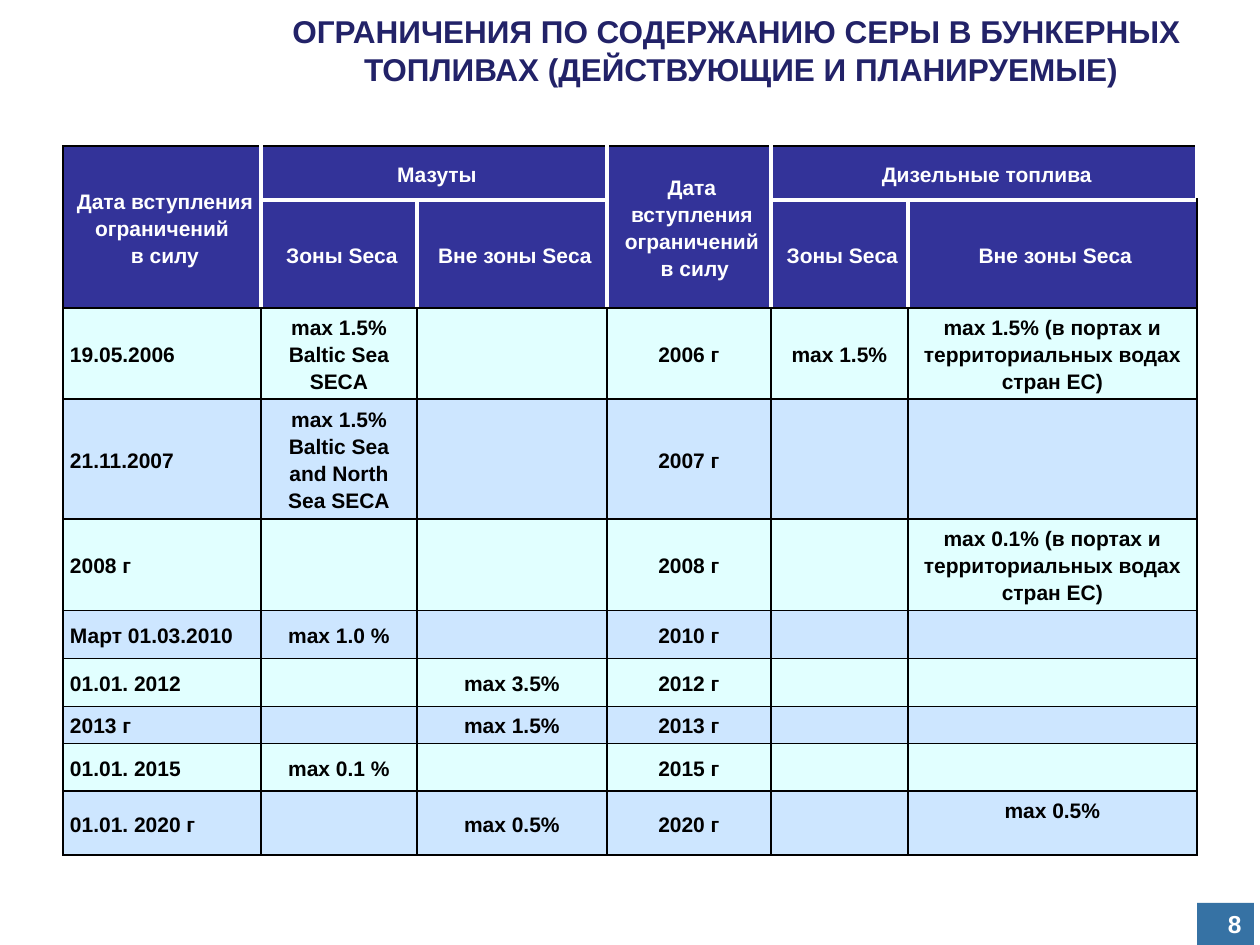
from lxml import etree
from pptx import Presentation
from pptx import util as u
from pptx.dml.color import RGBColor
from pptx.enum import shapes, text
from pptx.oxml.ns import qn

NAVY = RGBColor(0x22, 0x22, 0x68)
INDIGO = RGBColor(0x33, 0x33, 0x99)
STEEL = RGBColor(0x36, 0x72, 0xA4)
AQUA = RGBColor(0xE1, 0xFF, 0xFF)
SKY = RGBColor(0xCD, 0xE6, 0xFF)
WHITE = RGBColor(0xFF, 0xFF, 0xFF)
BLACK = RGBColor(0, 0, 0)
PX = 914400 / 126
ALIGN, ANCHOR = text.PP_ALIGN, text.MSO_ANCHOR

COLS = [198, 156, 190, 164, 137, 289]
ROWS = [54, 108, 91, 120, 91, 48, 48, 37, 48, 64]
PORTS = "(в портах и территориальных водах стран ЕС)"
CELLS = [
    ["Дата вступления ограничений \vв силу", "Мазуты", "",
     "Дата вступления ограничений\v в силу", "Дизельные топлива", ""],
    ["", "Зоны Seca", "Вне зоны Seca", "", "Зоны Seca", "Вне зоны Seca"],
    ["19.05.2006", "max 1.5% Baltic Sea SECA", "", "2006 г", "max 1.5%", f"max 1.5% {PORTS}"],
    ["21.11.2007", "max 1.5% Baltic Sea and North Sea SECA", "", "2007 г", "", ""],
    ["2008 г", "", "", "2008 г", "", f"max 0.1% {PORTS}"],
    ["Март 01.03.2010", "max 1.0 %", "", "2010 г", "", ""],
    ["01.01. 2012", "", "max 3.5%", "2012 г", "", ""],
    ["2013 г", "", "max 1.5%", "2013 г", "", ""],
    ["01.01. 2015", "max 0.1 %", "", "2015 г", "", ""],
    ["01.01. 2020 г", "", "max 0.5%", "2020 г", "", "max 0.5%"],
]


def write(tf, words, size, color, align):
    p = tf.paragraphs[0]
    p.text = words
    p.alignment = align
    for r in p.runs:
        for name, value in {"name": "Arial", "size": u.Pt(size), "bold": True}.items():
            setattr(r.font, name, value)
        r.font.color.rgb = color
    if not words:  # keeps empty cells from growing their row
        etree.SubElement(p._p, qn("a:endParaRPr"), sz=str(size * 100))
    return p


def add_border(cell, side, color):
    width = u.Pt(2.25 if color == WHITE else 1)
    ln = etree.SubElement(cell._tc.get_or_add_tcPr(), qn(f"a:ln{side}"), w=str(width))
    fill = etree.SubElement(ln, qn("a:solidFill"))
    etree.SubElement(fill, qn("a:srgbClr"), val=str(color))


prs = Presentation()
prs.slide_width, prs.slide_height = u.Inches(10), u.Inches(7.5)
s = prs.slides.add_slide(prs.slide_layouts[5])

# Title
sp = s.shapes.title
sp.left, sp.top, sp.width, sp.height = [round(v * PX) for v in (174, -11, 1134, 157)]
tf = sp.text_frame
for name, value in {"word_wrap": True, "auto_size": text.MSO_AUTO_SIZE.NONE,
                    "vertical_anchor": ANCHOR.MIDDLE,
                    "margin_bottom": round(42 * PX)}.items():
    setattr(tf, name, value)
p = write(tf, "ОГРАНИЧЕНИЯ ПО СОДЕРЖАНИЮ СЕРЫ В БУНКЕРНЫХ \v"
              "ТОПЛИВАХ (ДЕЙСТВУЮЩИЕ И ПЛАНИРУЕМЫЕ)", 18, NAVY, ALIGN.CENTER)

# Sulphur limits table
box = [round(v * PX) for v in (63, 146, sum(COLS), sum(ROWS))]
tbl = s.shapes.add_table(len(ROWS), len(COLS), *box).table
tbl.first_row = tbl.horz_banding = False
for col, width in zip(tbl.columns, COLS):
    col.width = round(width * PX)
for row, height in zip(tbl.rows, ROWS):
    row.height = round(height * PX)
for first, last in [((0, 0), (1, 0)), ((0, 1), (0, 2)), ((0, 3), (1, 3)), ((0, 4), (0, 5))]:
    tbl.cell(*first).merge(tbl.cell(*last))

for i, line in enumerate(CELLS):
    head = i < 2
    for j, words in enumerate(line):
        cell = tbl.cell(i, j)
        white_sides = {"L": head and j > 0, "R": head and j < 5,
                       "T": i == 1, "B": i == 0 and j not in (0, 3)}
        for side, is_white in white_sides.items():
            add_border(cell, side, WHITE if is_white else BLACK)
        cell.fill.solid()
        cell.fill.fore_color.rgb = INDIGO if head else (AQUA, SKY)[i % 2]
        cell.vertical_anchor = ANCHOR.TOP if (i, j) == (9, 5) else ANCHOR.MIDDLE
        margins = (6, 0, 0, 0) if head else (7, 5, 7, 5)
        for side, px in zip(("left", "top", "right", "bottom"), margins):
            setattr(cell, f"margin_{side}", round(px * PX))
        align = ALIGN.JUSTIFY if j == 0 and not head else ALIGN.CENTER
        p = write(cell.text_frame, words, 12, WHITE if head else BLACK, align)
        p.line_spacing = 1.15

# Page number
sp = s.shapes.add_shape(shapes.MSO_SHAPE.RECTANGLE,
                        *[round(v * PX) for v in (1197, 903, 57, 42)])
sp.shadow.inherit = False
sp.fill.solid()
sp.fill.fore_color.rgb = STEEL
sp.line.fill.background()
write(sp.text_frame, "8", 14, WHITE, ALIGN.RIGHT)

prs.save("out.pptx")
